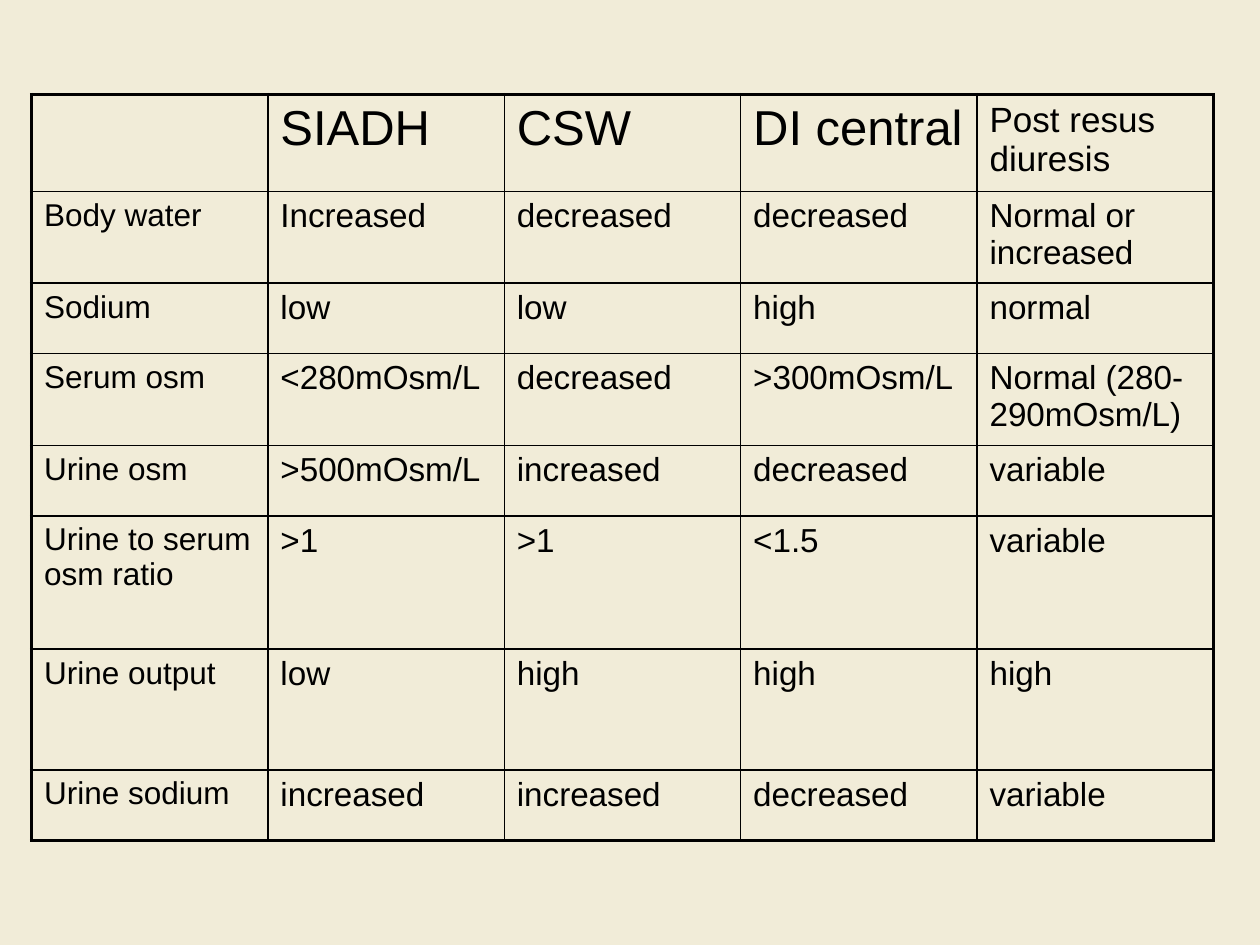
from lxml import etree
from pptx import Presentation
from pptx.dml.color import RGBColor
from pptx.enum.text import MSO_ANCHOR
from pptx.oxml.ns import qn
from pptx.util import Inches, Pt

TOP = MSO_ANCHOR.TOP
BACKGROUND = RGBColor(0xF1, 0xEC, 0xD8)
BLACK = RGBColor(0x00, 0x00, 0x00)
FONT = "Arial"
OUTER_LINE, INNER_LINE = Pt(2.25), Pt(1)
HEADING_SIZE, LONG_HEADING_SIZE, LABEL_SIZE, VALUE_SIZE = 28, 20, 18, 19
MARGINS = {
    "margin_left": Inches(0.1),
    "margin_right": Inches(0.1),
    "margin_top": Inches(0.05),
    "margin_bottom": Inches(0.05),
}

ROW_HEIGHTS = [0.77, 0.73, 0.56, 0.73, 0.56, 1.06, 0.96, 0.56]
COMPARISON = [
    ["", "SIADH", "CSW", "DI central", "Post resus diuresis"],
    ["Body water", "Increased", "decreased", "decreased", "Normal or increased"],
    ["Sodium", "low", "low", "high", "normal"],
    ["Serum osm", "<280mOsm/L", "decreased", ">300mOsm/L", "Normal (280-290mOsm/L)"],
    ["Urine osm", ">500mOsm/L", "increased", "decreased", "variable"],
    ["Urine to serum osm ratio", ">1", ">1", "<1.5", "variable"],
    ["Urine output", "low", "high", "high", "high"],
    ["Urine sodium", "increased", "increased", "decreased", "variable"],
]


def text_size(row, column, last_column):
    if row == 0:
        return LONG_HEADING_SIZE if column == last_column else HEADING_SIZE
    return LABEL_SIZE if column == 0 else VALUE_SIZE


def set_borders(cell, outer_sides):
    """Draw all four borders, heavier on the sides that lie on the table's edge."""
    properties = cell._tc.get_or_add_tcPr()
    for side, is_outer in outer_sides.items():
        width = OUTER_LINE if is_outer else INNER_LINE
        line = etree.SubElement(properties, qn(f"a:ln{side}"), w=str(width))
        fill = etree.SubElement(line, qn("a:solidFill"))
        etree.SubElement(fill, qn("a:srgbClr"), val=str(BLACK))


def write_cell(cell, text, size):
    for name, value in MARGINS.items():
        setattr(cell, name, value)
    cell.vertical_anchor = TOP
    paragraph = cell.text_frame.paragraphs[0]
    paragraph.text = text
    font_format = {"name": FONT, "size": Pt(size), "bold": False}
    for name, value in font_format.items():
        setattr(paragraph.font, name, value)
    paragraph.font.color.rgb = BLACK


def add_comparison_table(slide, left, top, width, height):
    last_row, last_column = len(COMPARISON) - 1, len(COMPARISON[0]) - 1
    table = slide.shapes.add_table(
        last_row + 1, last_column + 1, left, top, width, height
    ).table
    table.first_row = False
    table.horz_banding = False
    for row, row_height in zip(table.rows, ROW_HEIGHTS):
        row.height = int(height * row_height / sum(ROW_HEIGHTS))

    for row, texts in enumerate(COMPARISON):
        for column, text in enumerate(texts):
            cell = table.cell(row, column)
            write_cell(cell, text, text_size(row, column, last_column))
            set_borders(cell, {
                "L": column == 0,
                "R": column == last_column,
                "T": row == 0,
                "B": row == last_row,
            })
            cell.fill.background()


def main():
    presentation = Presentation()
    presentation.slide_width = Inches(10)
    presentation.slide_height = Inches(7.5)
    slide = presentation.slides.add_slide(presentation.slide_layouts[6])
    slide.background.fill.solid()
    slide.background.fill.fore_color.rgb = BACKGROUND
    add_comparison_table(slide, Inches(0.25), Inches(0.75), Inches(9.38), Inches(5.92))
    presentation.save("out.pptx")


if __name__ == "__main__":
    main()
